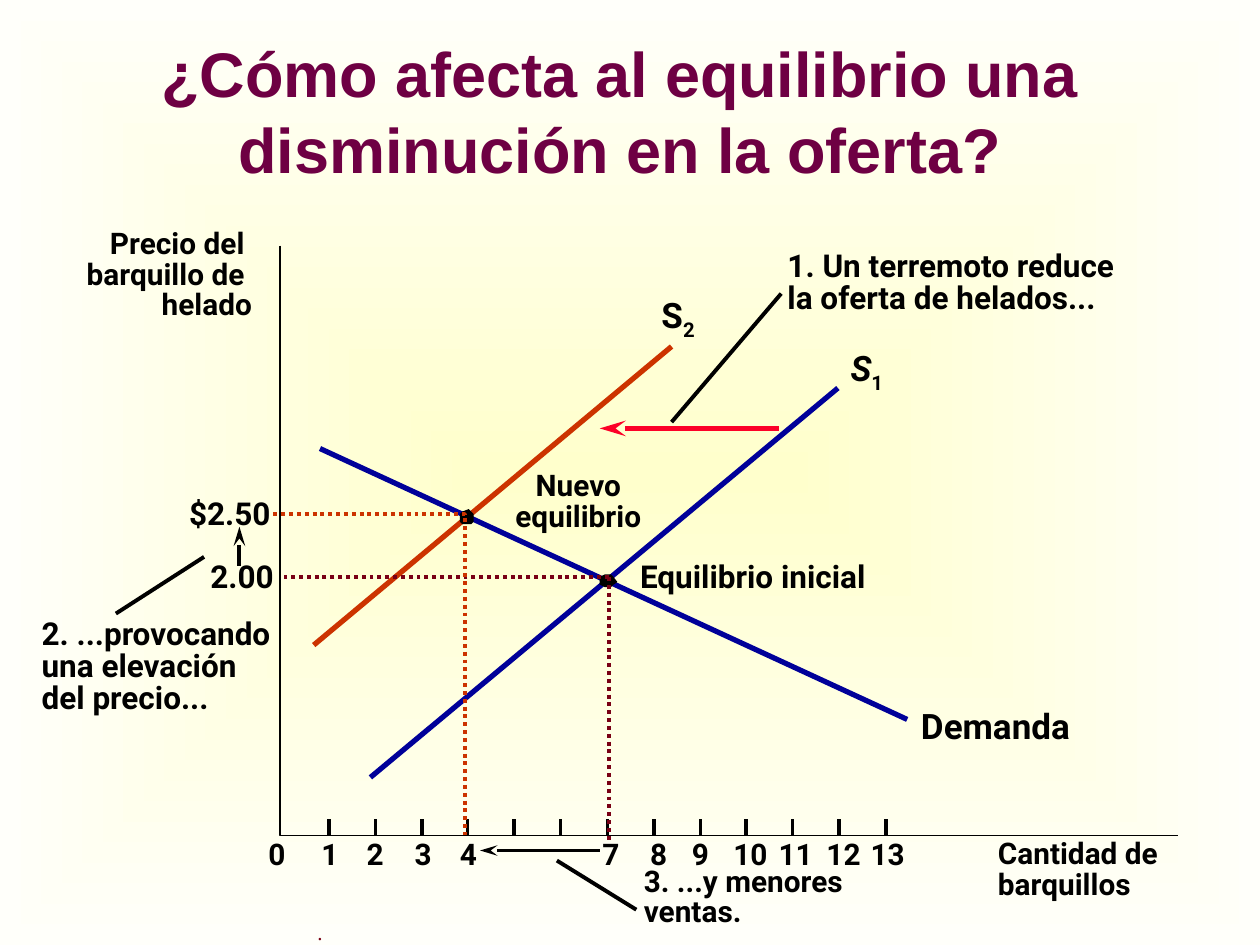
from copy import deepcopy
from typing import NamedTuple

from lxml.etree import SubElement
from pptx import Presentation
from pptx.dml.color import RGBColor
from pptx.enum.dml import MSO_LINE
from pptx.enum.shapes import MSO_CONNECTOR
from pptx.enum.text import MSO_ANCHOR, MSO_AUTO_SIZE, PP_ALIGN
from pptx.oxml.ns import qn
from pptx.util import Pt

PX = 9144  # 100 px to the inch

BLACK = RGBColor(0x00, 0x00, 0x00)
BLUE = RGBColor(0x00, 0x00, 0x99)
ORANGE = RGBColor(0xCC, 0x33, 0x00)
RED = RGBColor(0xFC, 0x01, 0x28)
MAROON = RGBColor(0x79, 0x00, 0x15)
PLUM = RGBColor(0x6E, 0x00, 0x43)
CREAM = RGBColor(0xFF, 0xFF, 0xCC)
IVORY = RGBColor(0xFF, 0xFF, 0xFA)

LEFT, CENTER, RIGHT = PP_ALIGN.LEFT, PP_ALIGN.CENTER, PP_ALIGN.RIGHT
TICK_START, TICK_STEP, TICK_COUNT = 261, 36.83, 13
AXIS_Y = 663


class Line(NamedTuple):
    x1: int
    y1: int
    x2: int
    y2: int
    color: RGBColor = BLACK
    width: float = 2.25
    dotted: bool = False
    arrow: bool = False


class Label(NamedTuple):
    text: str  # "\v" breaks a line, "\n" starts a paragraph
    x: int
    y: int
    w: int
    h: int
    size: int = 17
    align: PP_ALIGN = LEFT
    spacing: float | None = None
    subscript: str = ""
    italic: bool | None = None
    wrap: bool = False


class Outline(NamedTuple):
    points: list[tuple[int, int]]
    fill: RGBColor | None = None
    color: RGBColor | None = None
    width: float = 1
    dotted: bool = False


CURVES = [
    Line(533, 275, 249, 512, ORANGE, 3),
    Line(665, 308, 294, 617, BLUE, 3),
    Line(254, 356, 720, 571, BLUE, 3),
]
INITIAL_GUIDES = [
    Line(483, 458, 483, 667, MAROON, dotted=True),
    Line(483, 458, 225, 458, MAROON, dotted=True),
]
CALLOUTS = [
    Line(618, 340, 476, 340, RED, 3, arrow=True),
    Line(533, 335, 620, 233),
    Line(92, 487, 162, 442),
    Line(190, 449, 190, 418, arrow=True),
    Line(442, 683, 505, 722),
    Line(476, 675, 381, 675, width=2, arrow=True),
]
AXES = Outline([(222, 195), (222, AXIS_Y), (935, AXIS_Y)], color=BLACK)
INITIAL_POINT = Outline(
    [(483, 466), (485, 466), (487, 464), (490, 462), (487, 458), (485, 456),
     (483, 456), (480, 456), (476, 458), (476, 462), (476, 464), (480, 466)],
    fill=BLACK)
NEW_POINT = Outline(
    [(372, 416), (374, 416), (376, 414), (376, 410), (376, 408), (374, 406),
     (372, 404), (367, 406), (365, 408), (365, 410), (365, 414), (367, 416)],
    fill=BLACK)
NEW_GUIDE = Outline([(217, 408), (369, 408), (369, AXIS_Y)],
                    color=ORANGE, width=2.25, dotted=True)

QUANTITIES = {0: 213, 1: 255, 2: 291, 3: 329, 4: 365, 7: 478, 8: 516,
              9: 549, 10: 582, 11: 618, 12: 656, 13: 691}
LABELS = [
    Label("Precio del \vbarquillo de \vhelado", 52, 183, 148, 72, align=RIGHT, spacing=0.85),
    Label("Cantidad de\vbarquillos", 792, 667, 142, 48, spacing=0.85),
    Label("$2.50", 150, 392, 72, 30, 18),
    Label("2.00", 167, 442, 56, 30, 18),
    Label("S", 525, 233, 50, 33, 20, subscript="2", wrap=True),
    Label("S", 675, 275, 29, 33, 20, subscript="1", italic=True),
    Label("Demanda", 731, 559, 133, 33, 20),
    Label("Equilibrio inicial", 508, 442, 200, 30, 18),
    Label("Nuevo\nequilibrio", 403, 375, 112, 48, align=CENTER, spacing=0.85),
    Label("1. Un terremoto reduce\vla oferta de helados...", 625, 200, 293, 51, 18, spacing=0.85),
    Label("2. ...provocando\vuna elevación\vdel precio...", 33, 492, 202, 77, 18, spacing=0.85),
    Label("3. ...y menores\vventas.", 511, 689, 175, 48, spacing=0.85),
]


def set_attrs(obj, values: dict) -> None:
    for name, value in values.items():
        setattr(obj, name, value)


def style_line(line, color: RGBColor, width: float, dotted: bool) -> None:
    line.color.rgb = color
    line.width = Pt(width)
    if dotted:
        line.dash_style = MSO_LINE.ROUND_DOT


def style_font(font, size: int, color: RGBColor, name: str = "Roboto",
               bold: bool = True, italic: bool | None = None) -> None:
    set_attrs(font, {"size": Pt(size), "name": name, "bold": bold, "italic": italic})
    font.color.rgb = color


def draw_line(s, d: Line) -> None:
    sp = s.shapes.add_connector(MSO_CONNECTOR.STRAIGHT,
                                *(v * PX for v in (d.x1, d.y1, d.x2, d.y2)))
    style_line(sp.line, d.color, d.width, d.dotted)
    props = sp._element.spPr
    if d.arrow:
        SubElement(props.find(qn("a:ln")), qn("a:tailEnd"), type="stealth", w="med", len="lg")
    SubElement(props, qn("a:effectLst"))


def draw_outline(s, d: Outline) -> None:
    builder = s.shapes.build_freeform(*d.points[0], scale=PX)
    builder.add_line_segments(d.points[1:], close=d.fill is not None)
    sp = builder.convert_to_shape()
    sp.shadow.inherit = False
    if d.fill is None:
        sp.fill.background()
        style_line(sp.line, d.color, d.width, d.dotted)
    else:
        sp.fill.solid()
        sp.fill.fore_color.rgb = d.fill
        sp.line.fill.background()


def add_frame(s, x: int, y: int, w: int, h: int, values: dict):
    tf = s.shapes.add_textbox(x * PX, y * PX, w * PX, h * PX).text_frame
    set_attrs(tf, values)
    return tf


def draw_label(s, d: Label) -> None:
    tf = add_frame(s, d.x, d.y, d.w, d.h, {
        "margin_left": 0, "margin_top": 0, "margin_right": 0, "margin_bottom": 0,
        "word_wrap": d.wrap, "auto_size": MSO_AUTO_SIZE.SHAPE_TO_FIT_TEXT, "text": d.text})
    for p in tf.paragraphs:
        set_attrs(p, {"alignment": d.align, "line_spacing": d.spacing})
        for r in p.runs:
            style_font(r.font, d.size, BLACK, italic=d.italic)
        for br in p._p.findall(qn("a:br")):
            br.append(deepcopy(p.runs[0]._r.rPr))
    if d.subscript:
        r = tf.paragraphs[0].add_run()
        r.text = d.subscript
        style_font(r.font, d.size, BLACK)
        r._r.rPr.set("baseline", "-25000")


def paint_background(s) -> None:
    fill = s.background.fill
    fill.gradient()
    for stop, color in zip(fill.gradient_stops, (CREAM, IVORY)):
        stop.color.rgb = color
    grad = s._element.find(".//" + qn("a:gradFill"))
    grad.remove(grad.find(qn("a:lin")))
    shape = SubElement(grad, qn("a:path"), {"path": "shape"})
    SubElement(shape, qn("a:fillToRect"), {side: "50000" for side in "ltrb"})


def main() -> None:
    prs = Presentation()
    set_attrs(prs, {"slide_width": 1000 * PX, "slide_height": 750 * PX})
    s = prs.slides.add_slide(prs.slide_layouts[6])
    paint_background(s)

    # Footer mark and title
    tf = add_frame(s, 0, 700, 508, 50, {
        "margin_top": 0, "margin_bottom": 0, "word_wrap": False,
        "vertical_anchor": MSO_ANCHOR.BOTTOM, "text": "."})
    tf.paragraphs[0].alignment = CENTER
    style_font(tf.paragraphs[0].runs[0].font, 12, MAROON, "Times New Roman", False)
    tf = add_frame(s, 67, 25, 850, 125, {
        "word_wrap": True, "vertical_anchor": MSO_ANCHOR.MIDDLE,
        "text": "¿Cómo afecta al equilibrio una disminución en la oferta?"})
    tf.paragraphs[0].alignment = CENTER
    style_font(tf.paragraphs[0].runs[0].font, 36, PLUM, "Arial")

    # Axes, ticks and quantities
    draw_outline(s, AXES)
    for i in range(TICK_COUNT):
        x = round(TICK_START + i * TICK_STEP)
        draw_line(s, Line(x, AXIS_Y - 13, x, AXIS_Y, width=2))
    for quantity, x in QUANTITIES.items():
        draw_label(s, Label(str(quantity), x, AXIS_Y, 15 * len(str(quantity)), 28))

    # Curves, equilibrium points, guides and callouts
    for curve in CURVES:
        draw_line(s, curve)
    draw_outline(s, INITIAL_POINT)
    for guide in INITIAL_GUIDES:
        draw_line(s, guide)
    draw_outline(s, NEW_POINT)
    draw_outline(s, NEW_GUIDE)
    for callout in CALLOUTS:
        draw_line(s, callout)
    for label in LABELS:
        draw_label(s, label)

    prs.save("out.pptx")


if __name__ == "__main__":
    main()
